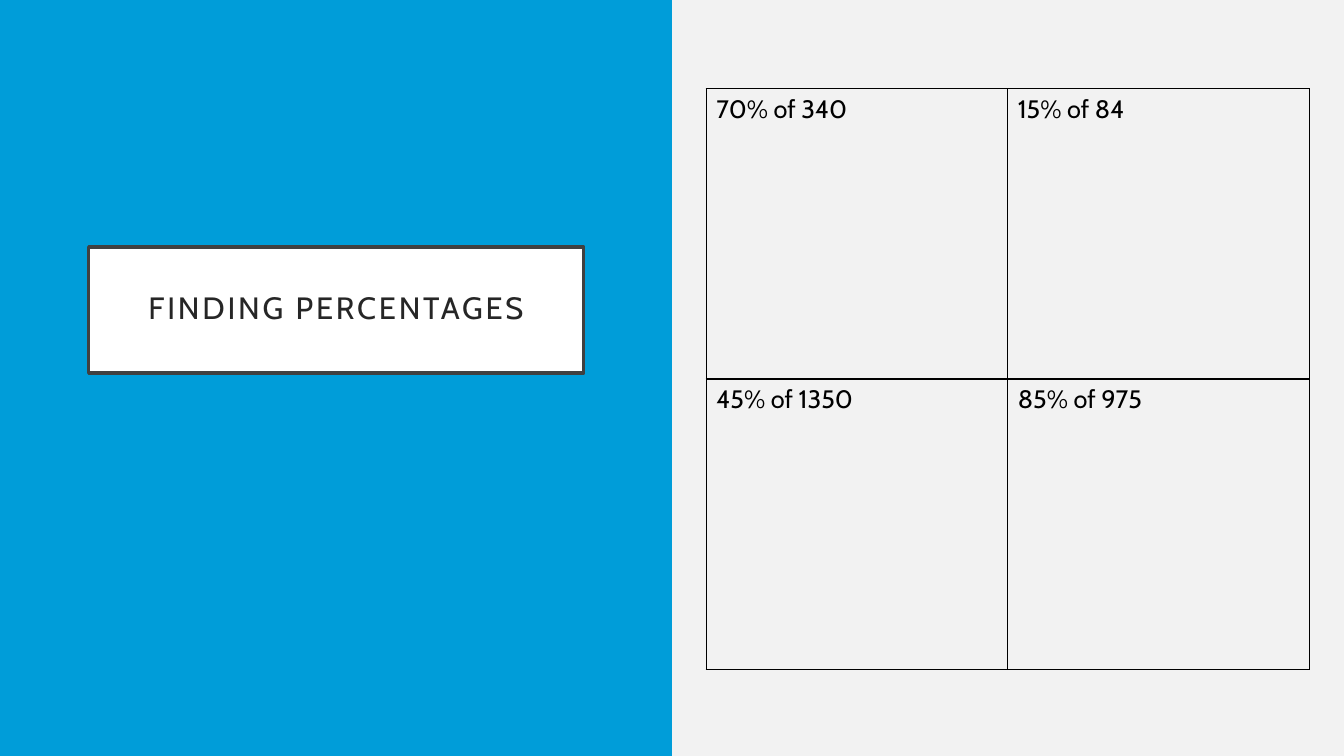
from dataclasses import dataclass

from lxml import etree
from pptx import Presentation
from pptx.dml.color import RGBColor
from pptx.enum.shapes import MSO_SHAPE
from pptx.enum.text import MSO_ANCHOR, PP_ALIGN
from pptx.oxml.ns import qn
from pptx.util import Inches, Pt

RECTANGLE = MSO_SHAPE.RECTANGLE
MIDDLE = MSO_ANCHOR.MIDDLE
LEFT, CENTER = PP_ALIGN.LEFT, PP_ALIGN.CENTER

BACKGROUND = RGBColor(0xF2, 0xF2, 0xF2)
BLUE = RGBColor(0x00, 0x9D, 0xD9)
WHITE = RGBColor(0xFF, 0xFF, 0xFF)
FRAME = RGBColor(0x40, 0x40, 0x40)
TITLE_INK = RGBColor(0x26, 0x26, 0x26)
BLACK = RGBColor(0x00, 0x00, 0x00)

FONT = "Cabin"
SLIDE_WIDTH, SLIDE_HEIGHT = 13.33, 7.5
HALF_WIDTH = SLIDE_WIDTH / 2
EXERCISES = (
    ("70% of 340", "15% of 84"),
    ("45% of 1350", "85% of 975"),
)


@dataclass(frozen=True)
class Box:
    left: float
    top: float
    width: float
    height: float

    def lengths(self) -> tuple:
        return tuple(Inches(v) for v in (self.left, self.top, self.width, self.height))


@dataclass(frozen=True)
class Panel:
    box: Box
    fill: RGBColor
    line: RGBColor | None = None
    line_width: float = 0


TABLE_BOX = Box(HALF_WIDTH + 0.34, 0.88, 5.98, 5.76)
BLUE_HALF = Panel(Box(0, 0, HALF_WIDTH, SLIDE_HEIGHT), BLUE)
TITLE_PANEL = Panel(Box(0.88, 2.45, 4.91, 1.25), WHITE, FRAME, 2.5)


def add_panel(slide, panel: Panel):
    shape = slide.shapes.add_shape(RECTANGLE, *panel.box.lengths())
    shape.shadow.inherit = False
    shape.fill.solid()
    shape.fill.fore_color.rgb = panel.fill
    if panel.line is None:
        shape.line.fill.background()
    else:
        shape.line.color.rgb = panel.line
        shape.line.width = Pt(panel.line_width)
    return shape


def write_text(frame, text: str, *, size: float, color: RGBColor, align=LEFT,
               line_spacing: float = 1.0, tracking: float = 0) -> None:
    paragraph = frame.paragraphs[0]
    paragraph.alignment = align
    paragraph.line_spacing = line_spacing
    run = paragraph.add_run()
    run.text = text
    run.font.name = FONT
    run.font.size = Pt(size)
    run.font.color.rgb = color
    if tracking:
        run.font._element.set("spc", str(round(tracking * 100)))


def add_title(slide, text: str) -> None:
    frame = add_panel(slide, TITLE_PANEL).text_frame
    frame.word_wrap = True
    frame.vertical_anchor = MIDDLE
    frame.margin_left = frame.margin_right = Inches(0.2)
    frame.margin_top = frame.margin_bottom = Inches(0.2)
    write_text(frame, text, size=22, color=TITLE_INK, align=CENTER,
               line_spacing=0.9, tracking=2)


def style_cell(cell) -> None:
    properties = cell._tc.get_or_add_tcPr()
    for side in ("a:lnL", "a:lnR", "a:lnT", "a:lnB"):
        border = etree.SubElement(properties, qn(side), w=str(Pt(1)))
        fill = etree.SubElement(border, qn("a:solidFill"))
        etree.SubElement(fill, qn("a:srgbClr"), val=str(BLACK))
    cell.fill.background()


def add_exercises(slide) -> None:
    rows, columns = len(EXERCISES), len(EXERCISES[0])
    table = slide.shapes.add_table(rows, columns, *TABLE_BOX.lengths()).table
    table.first_row = table.horz_banding = False
    for row, exercises in enumerate(EXERCISES):
        for column, exercise in enumerate(exercises):
            cell = table.cell(row, column)
            style_cell(cell)
            write_text(cell.text_frame, exercise, size=18, color=BLACK)


def main() -> None:
    presentation = Presentation()
    presentation.slide_width = Inches(SLIDE_WIDTH)
    presentation.slide_height = Inches(SLIDE_HEIGHT)
    slide = presentation.slides.add_slide(presentation.slide_layouts[6])
    slide.background.fill.solid()
    slide.background.fill.fore_color.rgb = BACKGROUND
    add_panel(slide, BLUE_HALF)
    add_title(slide, "FINDING PERCENTAGES")
    add_exercises(slide)
    presentation.save("out.pptx")


if __name__ == "__main__":
    main()
